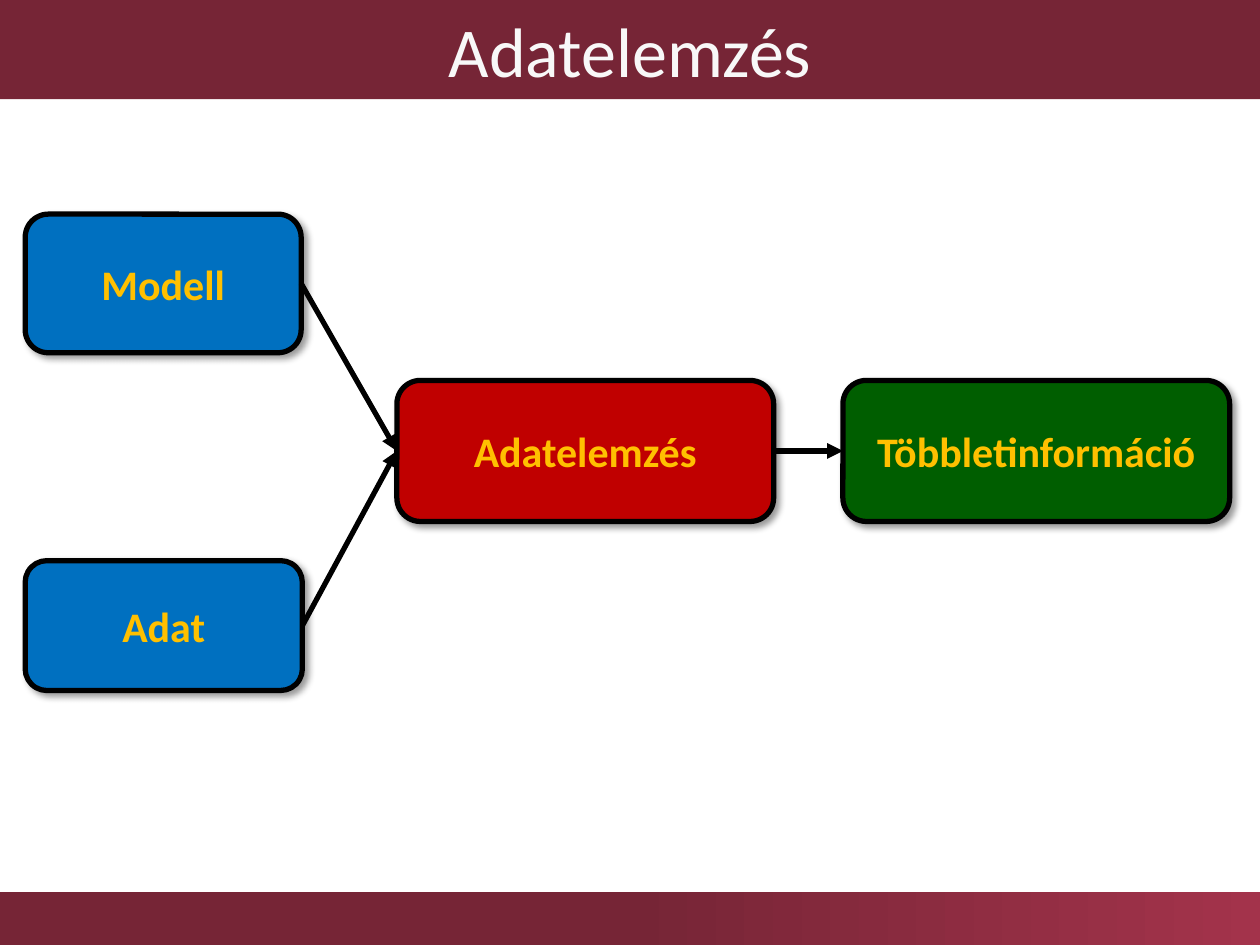
from lxml import etree
from pptx import Presentation
from pptx.dml.color import RGBColor
from pptx.enum.shapes import MSO_CONNECTOR, MSO_SHAPE
from pptx.enum.text import MSO_ANCHOR, PP_ALIGN
from pptx.oxml import parse_xml
from pptx.oxml.ns import qn
from pptx.util import Pt

RECT, ROUND = MSO_SHAPE.RECTANGLE, MSO_SHAPE.ROUNDED_RECTANGLE
STRAIGHT = MSO_CONNECTOR.STRAIGHT
MIDDLE, CENTER = MSO_ANCHOR.MIDDLE, PP_ALIGN.CENTER
LEFT_SIDE, RIGHT_SIDE = 1, 3
FONT = "Calibri"
COLORS = {
    "bar": "762536", "bar_end": "A3334B", "title": "F8F8F8",
    "input": "0070C0", "process": "C00000", "result": "005E00",
    "label": "FFC000", "line": "000000",
}
SHADOW = (
    '<a:effectLst xmlns:a="http://schemas.openxmlformats.org/drawingml/2006/main">'
    '<a:outerShdw blurRad="50800" dist="38100" dir="2700000" algn="tl" rotWithShape="0">'
    '<a:srgbClr val="000000"><a:alpha val="40000"/></a:srgbClr>'
    '</a:outerShdw></a:effectLst>'
)


def rgb(name):
    return RGBColor.from_string(COLORS[name])


def write(shape, text, size, color, bold):
    tf = shape.text_frame
    tf.word_wrap = True
    tf.vertical_anchor = MIDDLE
    p = tf.paragraphs[0]
    p.text = text
    p.alignment = CENTER
    p.font.name = FONT
    p.font.size = Pt(size)
    p.font.bold = bold
    p.font.color.rgb = rgb(color)


prs = Presentation()
prs.slide_width, prs.slide_height = Pt(720), Pt(540)
s = prs.slides.add_slide(prs.slide_layouts[5])

footer = s.shapes.add_shape(RECT, 0, Pt(510), Pt(720), Pt(30))
footer.shadow.inherit = False
footer.line.fill.background()
footer.fill.gradient()
footer.fill.gradient_angle = 0
for stop, position, color in zip(footer.fill.gradient_stops, (0.5, 1), ("bar", "bar_end")):
    stop.position = position
    stop.color.rgb = rgb(color)

title = s.shapes.title
title.left, title.top, title.width, title.height = 0, 0, Pt(720), Pt(56.7)
title.fill.solid()
title.fill.fore_color.rgb = rgb("bar")
write(title, "Adatelemzés", 40, "title", False)

boxes = {}
for text, color, left, top, width, height in [
    ("Adatelemzés", "process", 226.8, 217.4, 215.3, 80.6),
    ("Adat", "input", 14.4, 320.4, 158.4, 74.2),
    ("Modell", "input", 14.4, 122.4, 157.7, 79.2),
    ("Többletinformáció", "result", 481.7, 217.4, 221, 80.6),
]:
    sp = s.shapes.add_shape(ROUND, Pt(left), Pt(top), Pt(width), Pt(height))
    sp.fill.solid()
    sp.fill.fore_color.rgb = rgb(color)
    sp.line.color.rgb = rgb("line")
    sp.line.width = Pt(3)
    sp._element.spPr.append(parse_xml(SHADOW))
    write(sp, text, 24, "label", True)
    boxes[text] = sp

for source, target in [
    ("Modell", "Adatelemzés"),
    ("Adat", "Adatelemzés"),
    ("Adatelemzés", "Többletinformáció"),
]:
    arrow = s.shapes.add_connector(STRAIGHT, 0, 0, 0, 0)
    arrow.begin_connect(boxes[source], RIGHT_SIDE)
    arrow.end_connect(boxes[target], LEFT_SIDE)
    arrow.line.color.rgb = rgb("line")
    arrow.line.width = Pt(3)
    etree.SubElement(arrow.line._get_or_add_ln(), qn("a:tailEnd"), type="triangle")
    etree.SubElement(arrow._element.spPr, qn("a:effectLst"))

prs.save("out.pptx")
